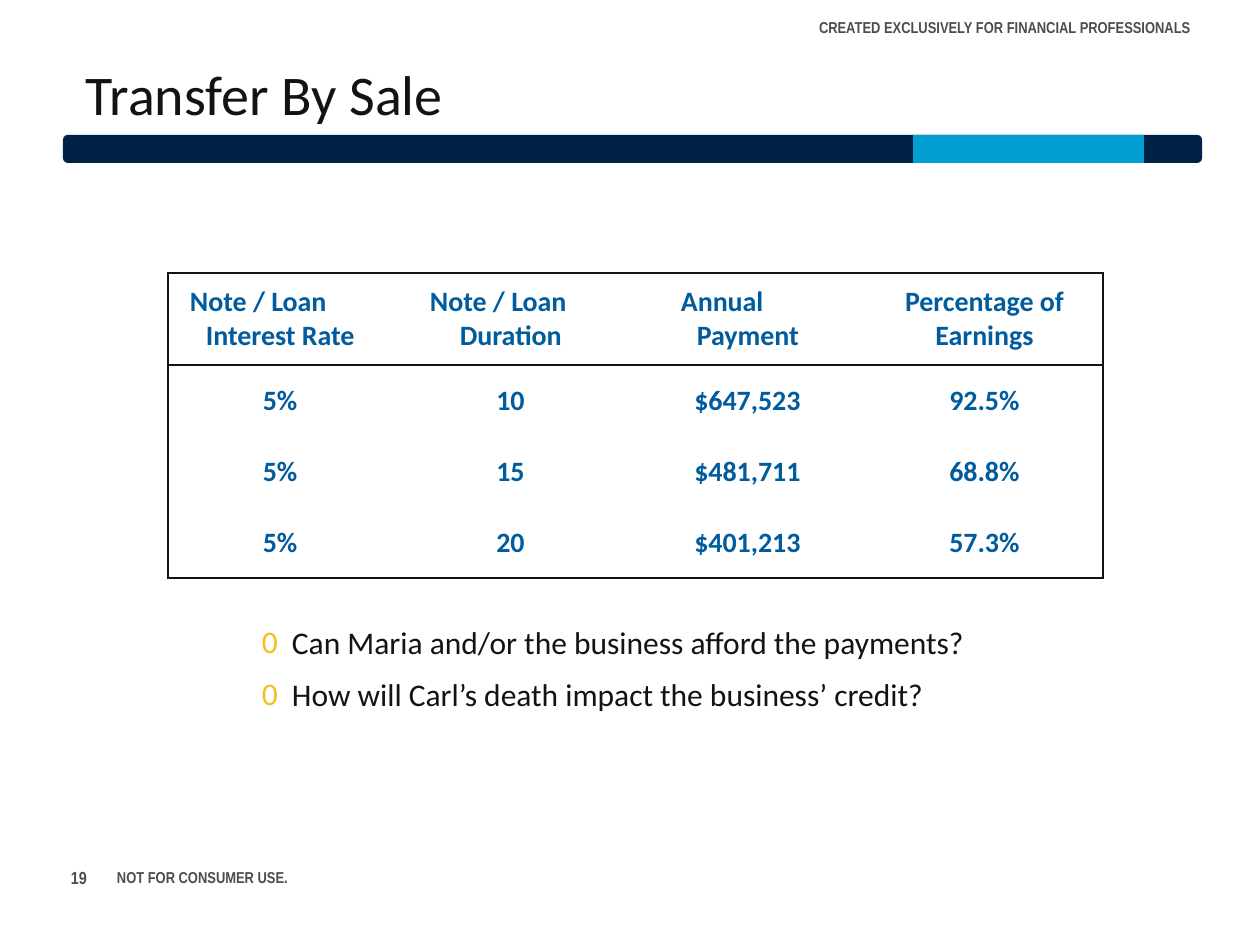
from lxml.etree import SubElement
from pptx import Presentation
from pptx.dml.color import RGBColor
from pptx.enum.shapes import MSO_SHAPE as Shape
from pptx.enum.text import MSO_ANCHOR as Anchor, PP_ALIGN as Align
from pptx.oxml.ns import qn
from pptx.util import Pt

INK = RGBColor(0x14, 0x13, 0x13)
GREY = RGBColor(0x50, 0x4C, 0x4C)
NAVY = RGBColor(0x00, 0x22, 0x47)
SKY = RGBColor(0x00, 0x9E, 0xD1)
BLUE = RGBColor(0x00, 0x5C, 0x9E)
GOLD = RGBColor(0xF7, 0xBE, 0x1C)
WHITE = RGBColor(0xFF, 0xFF, 0xFF)

PX_PER_INCH = 126


def px(length):
    return round(length * 914400 / PX_PER_INCH)


class SlideBuilder:
    body_font = "Calibri"
    label_font = "Arial Narrow"

    def __init__(self, slide):
        self.slide = slide

    def run(self, paragraph, text, size, color, font=body_font, bold=False):
        run = paragraph.add_run()
        run.text = text
        run.font.name = font
        run.font.size = Pt(size)
        run.font.bold = bold
        run.font.color.rgb = color

    def indent(self, paragraph, margin, first_line):
        props = paragraph._p.get_or_add_pPr()
        props.set("marL", str(px(margin)))
        props.set("indent", str(px(first_line)))
        return props

    def title(self, text, *box):
        title = self.slide.shapes.title
        title.left, title.top, title.width, title.height = map(px, box)
        frame = title.text_frame
        frame.word_wrap = False
        frame.vertical_anchor = Anchor.TOP
        frame.paragraphs[0].alignment = Align.CENTER
        self.run(frame.paragraphs[0], text, 32, INK)

    def bar(self, kind, color, *box):
        bar = self.slide.shapes.add_shape(kind, *map(px, box))
        bar.shadow.inherit = False
        bar.fill.solid()
        bar.fill.fore_color.rgb = color
        bar.line.fill.background()
        return bar

    def text_box(self, box, anchor, inset_x, inset_y):
        frame = self.slide.shapes.add_textbox(*map(px, box)).text_frame
        frame.word_wrap = True
        frame.vertical_anchor = anchor
        frame.margin_left = frame.margin_right = px(inset_x)
        frame.margin_top = frame.margin_bottom = px(inset_y)
        return frame

    def label(self, text, size, *box):
        frame = self.text_box(box, Anchor.MIDDLE, 11, 5)
        self.run(frame.paragraphs[0], text, size, GREY, self.label_font, True)

    def bullets(self, lines, *box):
        frame = self.text_box(box, Anchor.TOP, 0, 0)
        for number, line in enumerate(lines):
            paragraph = frame.add_paragraph() if number else frame.paragraphs[0]
            props = self.indent(paragraph, 30, -30)
            color = SubElement(SubElement(props, qn("a:buClr")), qn("a:srgbClr"))
            color.set("val", str(GOLD))
            SubElement(props, qn("a:buFont")).set("typeface", self.body_font)
            SubElement(props, qn("a:buChar")).set("char", "0")
            paragraph.line_spacing = 0.95
            if number:
                paragraph.space_before = Pt(9)
            self.run(paragraph, line, 18, INK)

    def border(self, cell, side, visible):
        line = SubElement(cell._tc.get_or_add_tcPr(), qn(f"a:ln{side}"))
        line.set("w", str(Pt(1)))
        if visible:
            fill = SubElement(line, qn("a:solidFill"))
            SubElement(fill, qn("a:srgbClr")).set("val", str(INK))
        else:
            SubElement(line, qn("a:noFill"))

    def table(self, rows, left, top, widths, heights, header_indents):
        table = self.slide.shapes.add_table(
            len(rows), len(widths), px(left), px(top),
            px(sum(widths)), px(sum(heights))).table
        table.first_row = table.horz_banding = False
        for column, width in zip(table.columns, widths):
            column.width = px(width)
        for row, height in zip(table.rows, heights):
            row.height = px(height)
        last_row, last_col = len(rows) - 1, len(widths) - 1
        for r, values in enumerate(rows):
            for c, value in enumerate(values):
                cell = table.cell(r, c)
                # Outer frame plus a rule under the header
                sides = {"L": c == 0, "R": c == last_col,
                         "T": r <= 1, "B": r in (0, last_row)}
                for side, visible in sides.items():
                    self.border(cell, side, visible)
                cell.fill.solid()
                cell.fill.fore_color.rgb = WHITE
                cell.vertical_anchor = Anchor.MIDDLE
                cell.margin_left = cell.margin_right = px(6)
                cell.margin_top = cell.margin_bottom = px(12)
                paragraph = cell.text_frame.paragraphs[0]
                paragraph.alignment = Align.CENTER
                # Staggered header lines hang from their second line
                if r == 0 and c in header_indents:
                    paragraph.alignment = Align.LEFT
                    self.indent(paragraph, *header_indents[c])
                self.run(paragraph, value, 16, BLUE, bold=True)


def main():
    deck = Presentation()
    deck.slide_width, deck.slide_height = px(1260), px(945)
    builder = SlideBuilder(deck.slides.add_slide(deck.slide_layouts[5]))

    # Page header
    builder.label("CREATED EXCLUSIVELY FOR FINANCIAL PROFESSIONALS", 9,
                  808, 3, 450, 48)
    title_bar = builder.bar(Shape.ROUNDED_RECTANGLE, NAVY, 63, 135, 1139, 28)
    title_bar.adjustments[0] = 0.17
    builder.bar(Shape.RECTANGLE, SKY, 913, 135, 231, 28)
    builder.title("Transfer By Sale", 65, 53, 399, 81)

    # Payment table
    payments = [
        ("Note / Loan Interest Rate", "Note / Loan Duration",
         "Annual Payment", "Percentage of Earnings"),
        ("5%", "10", "$647,523", "92.5%"),
        ("5%", "15", "$481,711", "68.8%"),
        ("5%", "20", "$401,213", "57.3%"),
    ]
    builder.table(payments, 168, 273, [224] + [237] * 3, [92] + [71] * 3,
                  {0: (32, -16), 1: (62, -30), 2: (62, -16)})

    # Questions
    builder.bullets(["Can Maria and/or the business afford the payments?",
                     "How will Carl’s death impact the business’ credit?"],
                    262, 626, 892, 91)

    # Footer
    builder.label("19", 10, 60, 848, 52, 59)
    builder.label("NOT FOR CONSUMER USE.", 9, 106, 848, 515, 59)

    deck.save("out.pptx")


if __name__ == "__main__":
    main()
